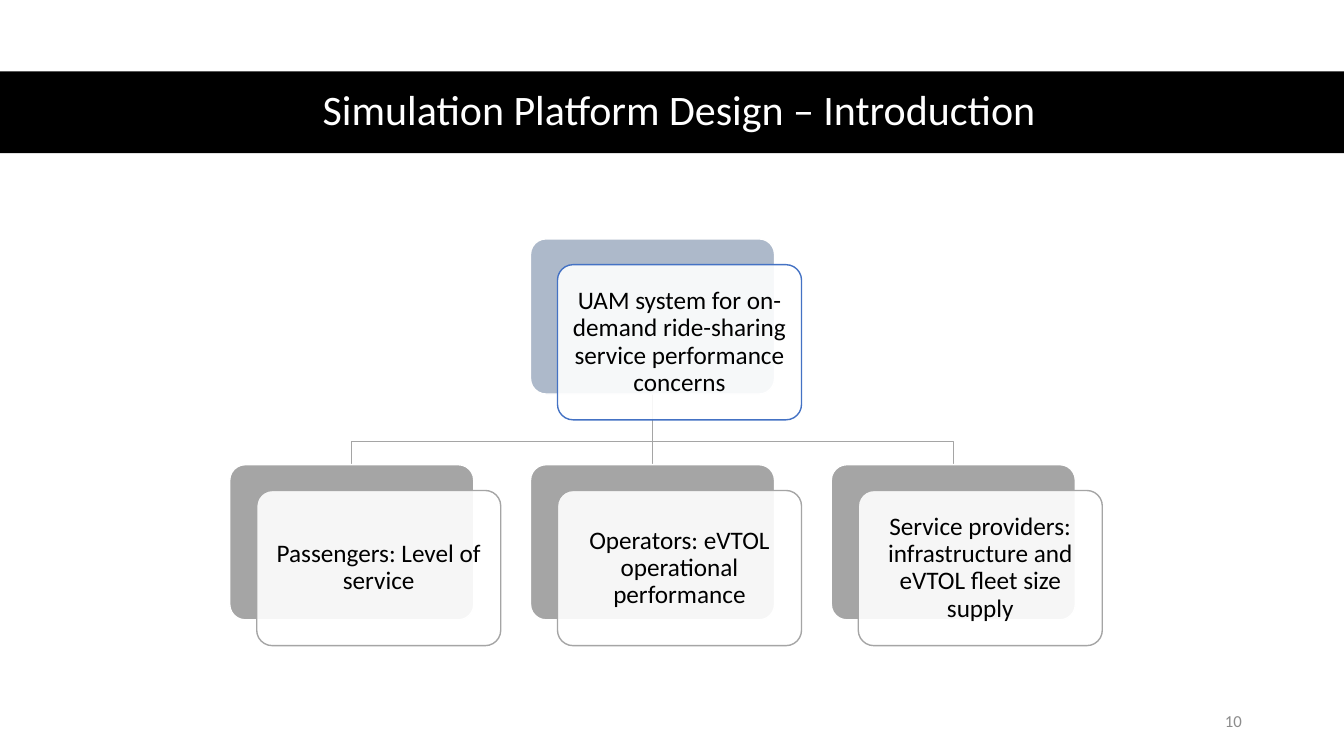
from lxml import etree
from pptx import Presentation
from pptx import util as u
from pptx.dml.color import RGBColor
from pptx.enum import shapes, text
from pptx.oxml.ns import qn

FONT = "Calibri"
GREY, BLUE = "A5A5A5", "4472C4"
CARD_W, CARD_H = 6.15, 3.91
SHIFT_X, SHIFT_Y = 0.68, 0.65
COLUMN_STEP, LEVEL_STEP = 7.58, 5.69
BAR_DROP = 1.2
ROOT = "UAM system for on-demand ride-sharing service performance concerns"
BRANCHES = [
    "Passengers: Level of service",
    "Operators: eVTOL operational performance",
    "Service providers: infrastructure and eVTOL fleet size supply",
]


def color(value):
    """Turn a hex string into a colour."""
    return RGBColor.from_string(value)


def write(shape, words, size=18, ink="000000", align=text.PP_ALIGN.CENTER,
          spacing=0.9, margin=0.18):
    """Write one formatted paragraph, centred vertically, into a shape."""
    frame = shape.text_frame
    frame.word_wrap = True
    frame.vertical_anchor = text.MSO_ANCHOR.MIDDLE
    frame.margin_left = frame.margin_right = u.Cm(margin)
    frame.margin_top = frame.margin_bottom = u.Cm(margin)
    paragraph = frame.paragraphs[0]
    paragraph.alignment = align
    paragraph.line_spacing = spacing
    run = paragraph.add_run()
    run.text = words
    run.font.name, run.font.size = FONT, u.Pt(size)
    run.font.color.rgb = color(ink)


def outline(line, ink):
    """Give a line its colour and the common width."""
    line.color.rgb = color(ink)
    line.width = u.Pt(1)


def block(slide, kind, box, fill, edge=None, opacity=100):
    """Add a filled preset shape in a box given in centimetres."""
    shape = slide.shapes.add_shape(kind, *map(u.Cm, box))
    shape.shadow.inherit = False
    shape.fill.solid()
    shape.fill.fore_color.rgb = color(fill)
    if edge:
        outline(shape.line, edge)
    else:
        shape.line.fill.background()
    if opacity < 100:
        tint = shape.fill._xPr.find(".//" + qn("a:srgbClr"))
        etree.SubElement(tint, qn("a:alpha"), val=str(opacity * 1000))
    return shape


def card(slide, left, top, words, back_fill, edge):
    """Draw a back plate with a translucent text card and return the plate."""
    rounded = shapes.MSO_SHAPE.ROUNDED_RECTANGLE
    plate = block(slide, rounded, (left, top, CARD_W, CARD_H), back_fill, "FFFFFF")
    front = block(slide, rounded,
                  (left + SHIFT_X, top + SHIFT_Y, CARD_W, CARD_H),
                  "FFFFFF", edge, opacity=90)
    for part in (plate, front):
        part.adjustments[0] = 0.1
    write(front, words)
    return plate


def side_branch(slide, start, end):
    """Draw a bent line from the root down to an outer card."""
    (x0, y0), (x1, y1) = start, end
    bar = y0 + BAR_DROP
    builder = slide.shapes.build_freeform(u.Cm(x0), u.Cm(y0))
    builder.add_line_segments(
        [(u.Cm(x), u.Cm(y)) for x, y in ((x0, bar), (x1, bar), (x1, y1))],
        close=False)
    bend = builder.convert_to_shape()
    bend.shadow.inherit = False
    bend.fill.background()
    outline(bend.line, GREY)


def trunk_line(slide, start, end):
    """Draw the straight line from the root to the middle card."""
    trunk = slide.shapes.add_connector(
        shapes.MSO_CONNECTOR.STRAIGHT, *map(u.Cm, start + end))
    outline(trunk.line, GREY)
    etree.SubElement(trunk._element.spPr, qn("a:effectLst"))
    return trunk


def title_band(slide, left, top, width, height):
    """Draw the black band and the slide title."""
    block(slide, shapes.MSO_SHAPE.RECTANGLE, (left, top, width, height), "000000")
    title = slide.shapes.add_textbox(
        u.Cm(left + 1.55), u.Cm(top - 0.02), u.Cm(width - 2.73), u.Cm(height))
    write(title, "Simulation Platform Design – Introduction", size=30, ink="FFFFFF")


def concern_tree(slide, left, top):
    """Draw the root card, its three branches and the lines between them."""
    lefts = [left + column * COLUMN_STEP for column in range(len(BRANCHES))]
    branch_top = top + LEVEL_STEP
    start = (lefts[1] + CARD_W / 2, top + CARD_H)
    ends = [(x + CARD_W / 2, branch_top) for x in lefts]
    side_branch(slide, start, ends[2])
    trunk = trunk_line(slide, start, ends[1])
    side_branch(slide, start, ends[0])
    root = card(slide, lefts[1], top, ROOT, "ADB9CA", BLUE)
    plates = [card(slide, x, branch_top, words, GREY, GREY)
              for x, words in zip(lefts, BRANCHES)]
    trunk.begin_connect(root, 2)
    trunk.end_connect(plates[1], 0)


def page_number(slide, left, top, width, height):
    """Write the page number at the lower right."""
    number = slide.shapes.add_textbox(*map(u.Cm, (left, top, width, height)))
    write(number, "10", size=12, ink="8C8C8C", align=text.PP_ALIGN.RIGHT,
          spacing=1.0, margin=0.25)


def main():
    """Build the slide and save it."""
    deck = Presentation()
    deck.slide_width, deck.slide_height = u.Cm(33.87), u.Cm(19.05)
    slide = deck.slides.add_slide(deck.slide_layouts[6])
    title_band(slide, 0, 1.8, 33.87, 2.06)
    concern_tree(slide, 5.79, 6.02)
    page_number(slide, 23.93, 17.65, 7.62, 1.02)
    deck.save("out.pptx")


if __name__ == "__main__":
    main()
